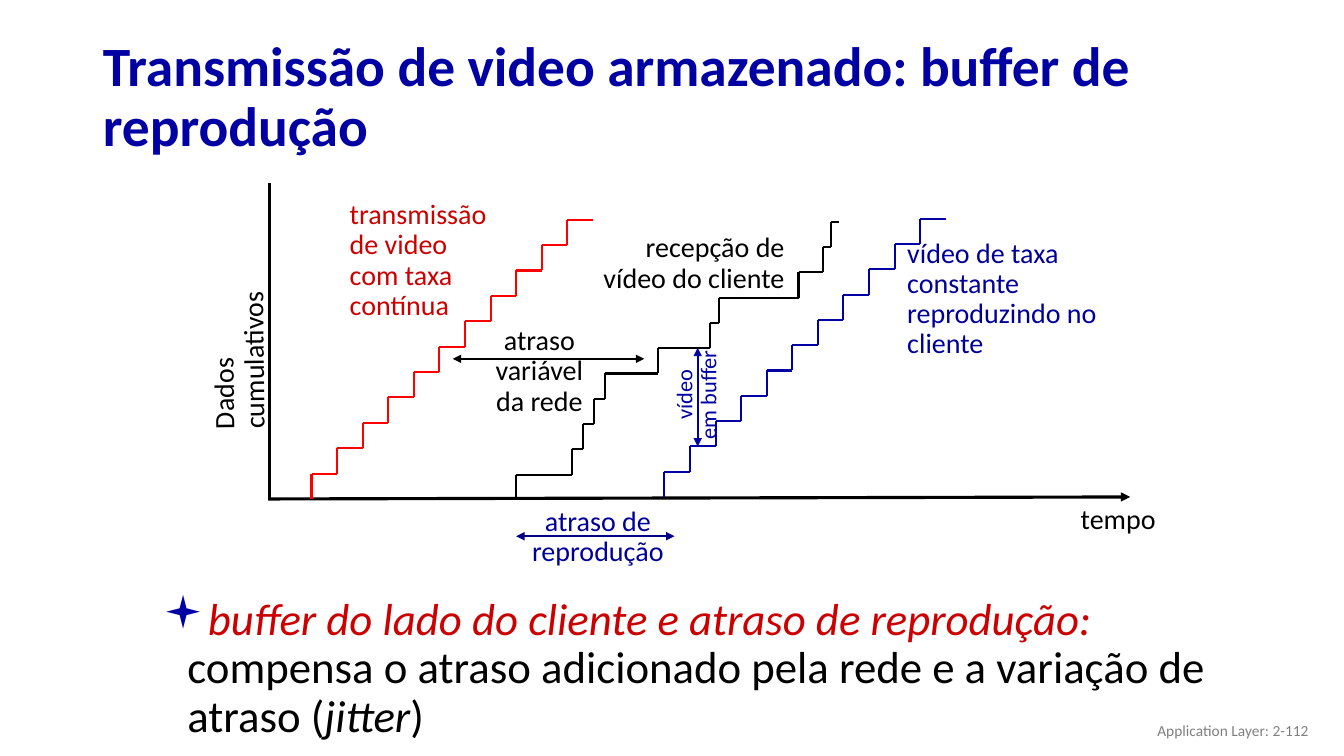
import dataclasses

import pptx
import pptx.dml.color
import pptx.enum.shapes
import pptx.enum.text
import pptx.oxml.ns
import pptx.util
from lxml import etree
from pptx.util import Inches

ALIGN = pptx.enum.text.PP_ALIGN
ANCHOR = pptx.enum.text.MSO_ANCHOR
FIT = pptx.enum.text.MSO_AUTO_SIZE


@dataclasses.dataclass(frozen=True)
class Theme:
    """Colours, type sizes and line widths of the slide."""
    font: str = "Calibri"
    black: str = "000000"
    blue: str = "0000A3"
    navy: str = "000099"
    deep: str = "010086"
    red: str = "FF0000"
    crimson: str = "CC0000"
    gray: str = "808080"
    title: float = 39.6
    body: float = 32
    label: float = 20
    small: float = 16
    foot: float = 11
    thin: float = 1.5
    thick: float = 2.25


THEME = Theme()


def add_tag(parent, tag, **attrs):
    """Append a drawing element with its attributes."""
    item = etree.SubElement(parent, pptx.oxml.ns.qn(tag))
    for key, value in attrs.items():
        item.set(key, value)
    return item


def set_font(run, size, color, bold=False, italic=False):
    """Format one run."""
    font = run.font
    font.name, font.size = THEME.font, pptx.util.Pt(size)
    font.bold, font.italic = bold, italic
    font.color.rgb = pptx.dml.color.RGBColor.from_string(color)


def add_line(shapes, start, end, color, width=THEME.thin, heads=()):
    """Draw a straight line with the arrowheads named in heads."""
    kind = pptx.enum.shapes.MSO_CONNECTOR.STRAIGHT
    line = shapes.add_connector(kind, *map(Inches, (*start, *end)))
    line.line.color.rgb = pptx.dml.color.RGBColor.from_string(color)
    line.line.width = pptx.util.Pt(width)
    props = line._element.spPr
    for head in heads:
        add_tag(props.find(pptx.oxml.ns.qn("a:ln")), head, type="triangle")
    add_tag(props, "a:effectLst")


def add_arrow(shapes, start, end, color):
    """Draw a line with an arrowhead at both ends."""
    add_line(shapes, start, end, color, heads=("a:headEnd", "a:tailEnd"))


def add_stairs(slide, edges, base, top, color):
    """Draw a grouped staircase that rises evenly at each edge but the last."""
    shapes = slide.shapes.add_group_shape().shapes
    rise = (base - top) / (len(edges) - 1)
    for step, (left, right) in enumerate(zip(edges, edges[1:])):
        low = base - step * rise
        high = low - rise
        add_line(shapes, (left, low), (left, high), color)
        add_line(shapes, (left, high), (right, high), color)


def add_label(slide, text, area, color, size=THEME.label, align=ALIGN.LEFT,
              wrap=True, turn=0, space=0.9):
    """Add a text box with one paragraph per line of text."""
    box = slide.shapes.add_textbox(*map(Inches, area))
    box.rotation = turn
    frame = box.text_frame
    frame.word_wrap, frame.auto_size = wrap, FIT.SHAPE_TO_FIT_TEXT
    frame.text = text
    for para in frame.paragraphs:
        para.alignment, para.line_spacing = align, space
        for run in para.runs:
            set_font(run, size, color)
    return frame


def add_title(slide, text, area):
    """Place and format the title placeholder."""
    title = slide.shapes.title
    title.left, title.top, title.width, title.height = map(Inches, area)
    frame = title.text_frame
    frame.text = text
    frame.word_wrap, frame.auto_size = True, FIT.NONE
    frame.vertical_anchor = ANCHOR.MIDDLE
    para = frame.paragraphs[0]
    para.alignment, para.line_spacing = ALIGN.LEFT, 0.9
    set_font(para.runs[0], THEME.title, THEME.blue, bold=True)


def add_bullet(slide, parts, area):
    """Add a bulleted paragraph from (text, colour, italic) parts."""
    frame = slide.shapes.add_textbox(*map(Inches, area)).text_frame
    frame.word_wrap = True
    para = frame.paragraphs[0]
    para.line_spacing = 0.9
    props = para._p.get_or_add_pPr()
    props.set("marL", str(Inches(0.39)))
    props.set("indent", str(Inches(-0.24)))
    add_tag(add_tag(props, "a:buClr"), "a:srgbClr", val=THEME.blue)
    add_tag(props, "a:buFont", typeface="Wingdings")
    add_tag(props, "a:buChar", char="▪")
    for text, color, italic in parts:
        run = para.add_run()
        run.text = text
        set_font(run, THEME.body, color, italic=italic)


def add_chart(slide):
    """Draw the axes, the three staircases and their labels."""
    shapes = slide.shapes
    add_line(shapes, (2.67, 1.82), (2.67, 4.94), THEME.black, THEME.thick)
    add_line(shapes, (2.66, 4.95), (11.21, 4.93), THEME.black, THEME.thick,
             heads=("a:tailEnd",))
    add_label(slide, "transmissão de video com taxa contínua",
              (3.37, 1.94, 1.65, 1.31), THEME.crimson)
    add_label(slide, "Dados cumulativos", (1.31, 2.93, 2.14, 0.71),
              THEME.black, turn=269.4)
    add_label(slide, "tempo", (10.62, 4.96, 0.95, 0.4), THEME.black, wrap=False)

    even = [step * 2.79 / 11 for step in range(12)]
    add_stairs(slide, [3.09 + gap for gap in even], 4.95, 2.18, THEME.red)
    client = [5.12, 5.67, 5.78, 5.89, 6, 6.53, 7.04, 7.13, 7.92, 8.16, 8.24, 8.32]
    add_stairs(slide, client, 4.96, 2.2, THEME.black)
    add_label(slide, "atraso\nvariável\nda rede", (4.8, 3.19, 1.1, 1.01),
              THEME.black, align=ALIGN.CENTER, wrap=False)
    add_arrow(shapes, (4.49, 3.56), (6.39, 3.56), THEME.black)
    add_label(slide, "recepção de\nvídeo do cliente", (5.87, 2.27, 2.01, 0.71),
              THEME.black, align=ALIGN.RIGHT, wrap=False)

    add_stairs(slide, [6.59 + gap for gap in even], 4.93, 2.17, THEME.blue)
    add_label(slide, "vídeo de taxa constante reproduzindo no cliente",
              (8.9, 2.32, 2.23, 1.31), THEME.navy)
    add_label(slide, "atraso de\nreprodução", (5.01, 4.98, 1.84, 0.71),
              THEME.navy, align=ALIGN.CENTER)
    add_arrow(shapes, (5.12, 5.32), (6.69, 5.32), THEME.deep)
    add_arrow(shapes, (6.92, 4.43), (6.92, 3.45), THEME.blue)
    add_label(slide, "vídeo\nem buffer", (6.37, 3.62, 1.1, 0.59), THEME.blue,
              THEME.small, ALIGN.CENTER, wrap=False, turn=270)


def main():
    """Build the slide and save it."""
    deck = pptx.Presentation()
    deck.slide_width, deck.slide_height = Inches(13.33), Inches(7.5)
    slide = deck.slides.add_slide(deck.slide_layouts[5])
    add_title(slide, "Transmissão de video armazenado: buffer de reprodução",
              (0.92, 0.49, 11.5, 0.98))
    add_chart(slide)
    add_bullet(slide, [
        ("buffer do lado do cliente e atraso de reprodução: ", THEME.crimson, True),
        ("compensa o atraso adicionado pela rede e a variação de atraso (",
         THEME.black, False),
        ("jitter", THEME.black, True),
        (")", THEME.black, False),
    ], (1.37, 5.87, 11.5, 0.97))
    foot = add_label(slide, "Application Layer: 2-112", (10.08, 7.05, 3, 0.4),
                     THEME.gray, THEME.foot, ALIGN.RIGHT, space=1.0)
    foot.auto_size, foot.vertical_anchor = FIT.NONE, ANCHOR.MIDDLE
    deck.save("out.pptx")


if __name__ == "__main__":
    main()
